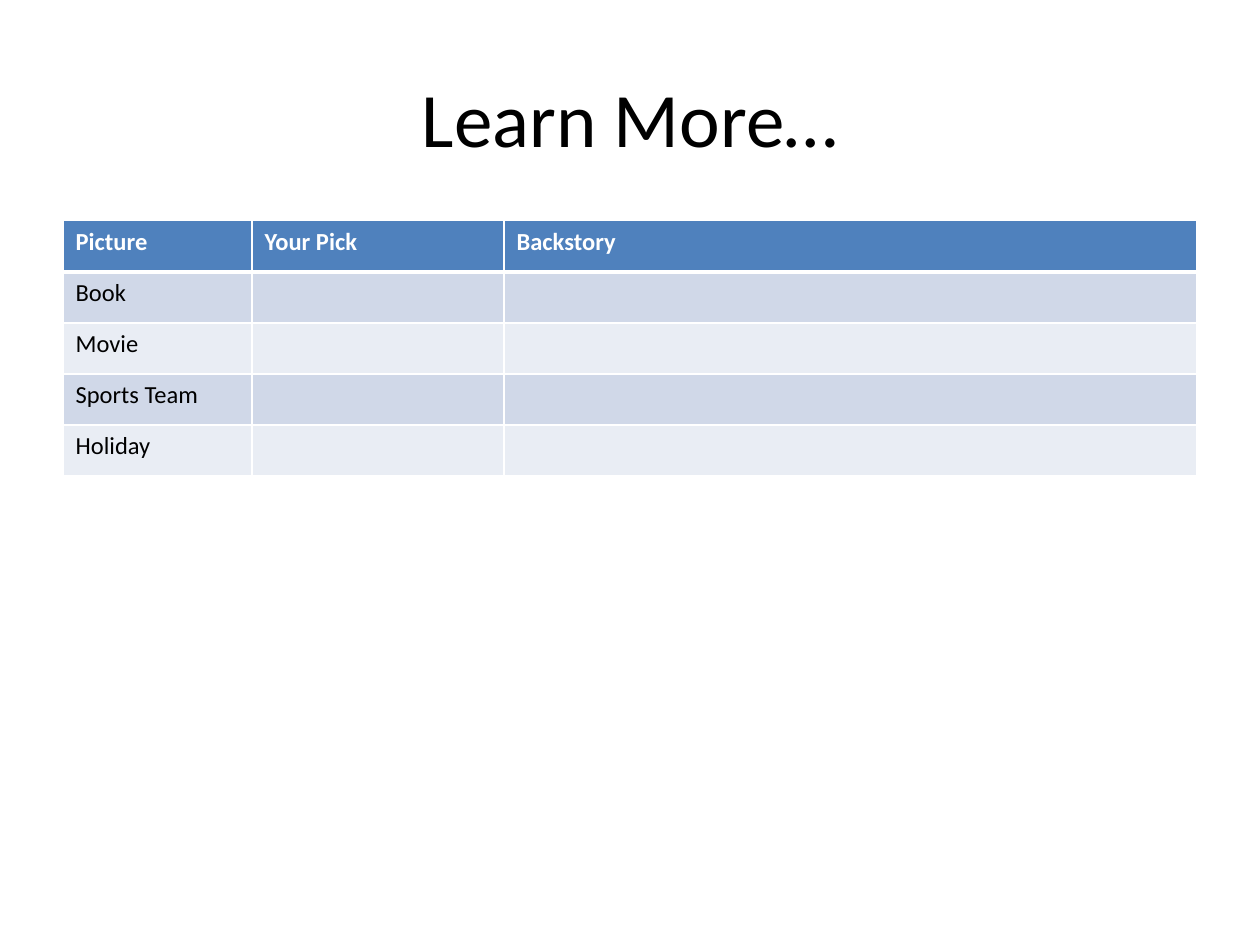
from lxml.etree import SubElement
from pptx import Presentation
from pptx.dml.color import RGBColor
from pptx.enum.text import MSO_ANCHOR, PP_ALIGN
from pptx.oxml.ns import qn
from pptx.util import Cm, Pt

WHITE = RGBColor(0xFF, 0xFF, 0xFF)
BLACK = RGBColor(0x00, 0x00, 0x00)
BLUE = RGBColor(0x4F, 0x81, 0xBD)
BAND_DARK = RGBColor(0xD0, 0xD8, 0xE8)
BAND_LIGHT = RGBColor(0xE9, 0xED, 0xF4)

HEADERS = ["Picture", "Your Pick", "Backstory"]
TOPICS = ["Book", "Movie", "Sports Team", "Holiday"]
COLUMN_WIDTHS = [3.81, 5.08, 13.97]
ROW_HEIGHT = 1.03
LEFT, WIDTH = Cm(1.27), Cm(22.86)


def set_font(font, size, color, bold=False):
    values = {"name": "Calibri", "size": Pt(size), "bold": bold}
    for name, value in values.items():
        setattr(font, name, value)
    font.color.rgb = color


def set_borders(cell, bottom, top):
    """Draw white cell borders; bottom and top are widths in points."""
    tcPr = cell._tc.get_or_add_tcPr()
    widths = {"a:lnL": 1, "a:lnR": 1, "a:lnT": top, "a:lnB": bottom}
    for i, (tag, width) in enumerate(widths.items()):
        ln = SubElement(tcPr, qn(tag), w=str(Pt(width)))
        fill = SubElement(ln, qn("a:solidFill"))
        SubElement(fill, qn("a:srgbClr"), val=str(WHITE))
        tcPr.insert(i, ln)  # borders come before the cell fill


prs = Presentation()
prs.slide_width, prs.slide_height = Cm(25.4), Cm(19.05)
s = prs.slides.add_slide(prs.slide_layouts[6])

# Title
title = s.shapes.add_textbox(LEFT, Cm(0.76), WIDTH, Cm(3.18))
tf = title.text_frame
tf.word_wrap = True
tf.vertical_anchor = MSO_ANCHOR.MIDDLE
p = tf.paragraphs[0]
p.alignment = PP_ALIGN.CENTER
r = p.add_run()
r.text = "Learn More…"
set_font(r.font, 44, BLACK)

# Table of picks
rows = [HEADERS] + [[topic, "", ""] for topic in TOPICS]
table = s.shapes.add_table(len(rows), len(HEADERS), LEFT, Cm(4.45),
                           WIDTH, Cm(ROW_HEIGHT * len(rows))).table
for column, width in zip(table.columns, COLUMN_WIDTHS):
    column.width = Cm(width)

for i, row in enumerate(rows):
    is_header = i == 0
    fill = BLUE if is_header else BAND_DARK if i % 2 else BAND_LIGHT
    for j, text in enumerate(row):
        cell = table.cell(i, j)
        cell.fill.solid()
        cell.fill.fore_color.rgb = fill
        set_borders(cell, bottom=3 if is_header else 1, top=3 if i == 1 else 1)
        p = cell.text_frame.paragraphs[0]
        set_font(p.font, 14, BLACK)
        if text:
            r = p.add_run()
            r.text = text
            set_font(r.font, 14, WHITE if is_header else BLACK, is_header)

prs.save("out.pptx")
